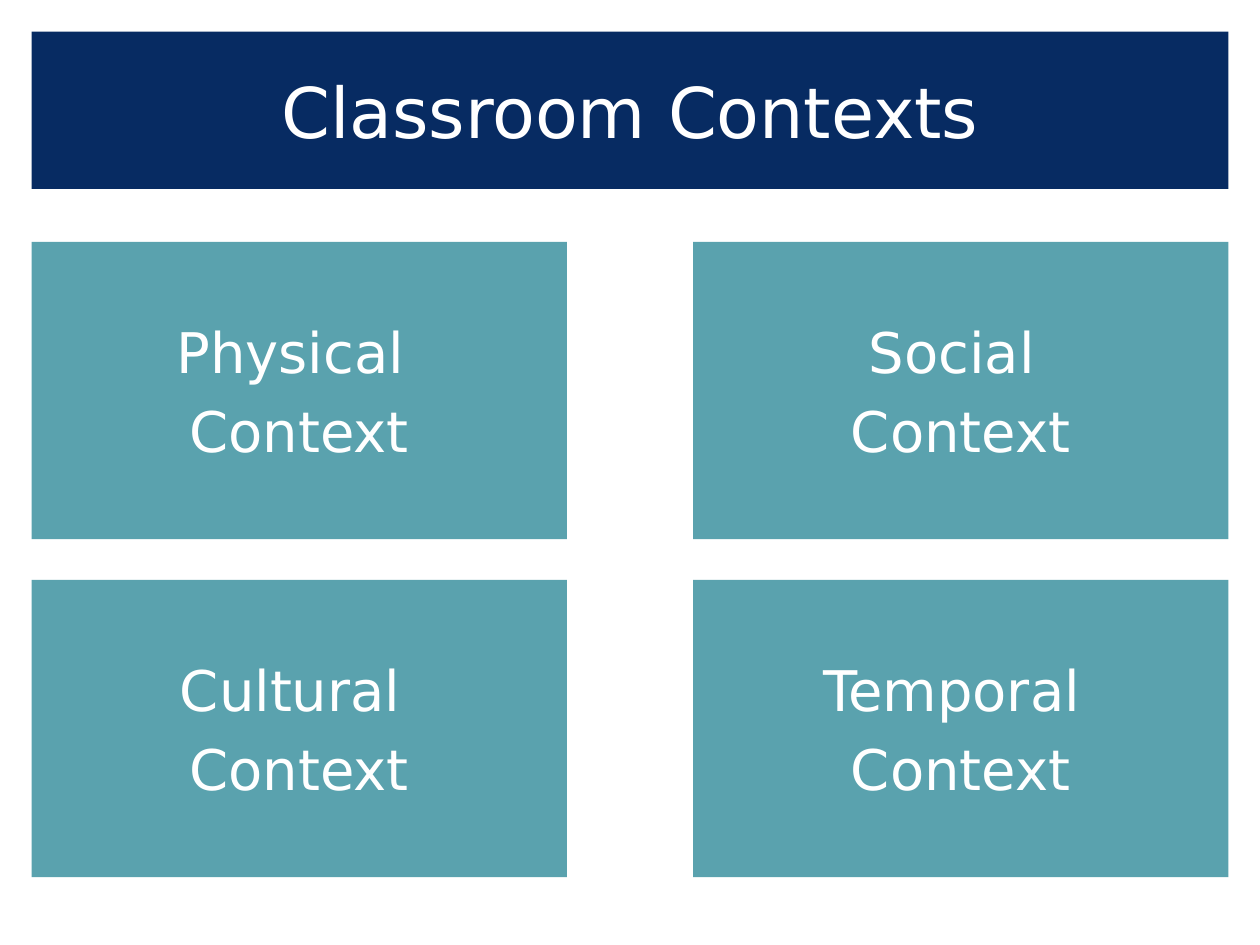
from pptx import Presentation
from pptx.dml.color import RGBColor
from pptx.enum.shapes import MSO_SHAPE
from pptx.enum.text import MSO_ANCHOR, MSO_AUTO_SIZE, PP_ALIGN
from pptx.util import Pt

TITLE = "Classroom Contexts"
CONTEXTS = [
    ["Physical ", "Context"],
    ["Social ", "Context"],
    ["Cultural ", "Context"],
    ["Temporal ", "Context"],
]
COLORS = {"title": "072B62", "card": "5AA2AE", "text": "FFFFFF"}
FONT = "DejaVu Sans"
MARGIN, TOP = 18, 138.24
CARD_W, CARD_H = 306, 169.92
STEP_X, STEP_Y = 378, 193.2


def fill_box(sp, box, color, lines, size, before):
    """Place a box, colour it and write its centred lines."""
    sp.left, sp.top, sp.width, sp.height = [Pt(v) for v in box]
    sp.fill.solid()
    sp.fill.fore_color.rgb = RGBColor.from_string(COLORS[color])
    sp.line.fill.background()
    tf = sp.text_frame
    tf.word_wrap = True
    tf.auto_size = MSO_AUTO_SIZE.NONE
    tf.vertical_anchor = MSO_ANCHOR.MIDDLE
    tf.margin_left = tf.margin_right = tf.margin_top = tf.margin_bottom = Pt(7.2)
    for i, line in enumerate(lines):
        p = tf.add_paragraph() if i else tf.paragraphs[0]
        p.alignment = PP_ALIGN.CENTER
        p.space_before = Pt(before)
        r = p.add_run()
        r.text = line
        r.font.name = FONT
        r.font.size = Pt(size)
        r.font.color.rgb = RGBColor.from_string(COLORS["text"])


def main():
    prs = Presentation()
    prs.slide_width, prs.slide_height = Pt(720), Pt(540)
    s = prs.slides.add_slide(prs.slide_layouts[5])
    fill_box(s.shapes.title, (MARGIN, MARGIN, 684, 90), "title", [TITLE], 40, 0)
    for i, lines in enumerate(CONTEXTS):
        row, col = divmod(i, 2)
        box = (MARGIN + col * STEP_X, TOP + row * STEP_Y, CARD_W, CARD_H)
        sp = s.shapes.add_shape(MSO_SHAPE.RECTANGLE, *[Pt(v) for v in box])
        sp.shadow.inherit = False
        fill_box(sp, box, "card", lines, 32, 6.4)
    prs.save("out.pptx")


if __name__ == "__main__":
    main()
